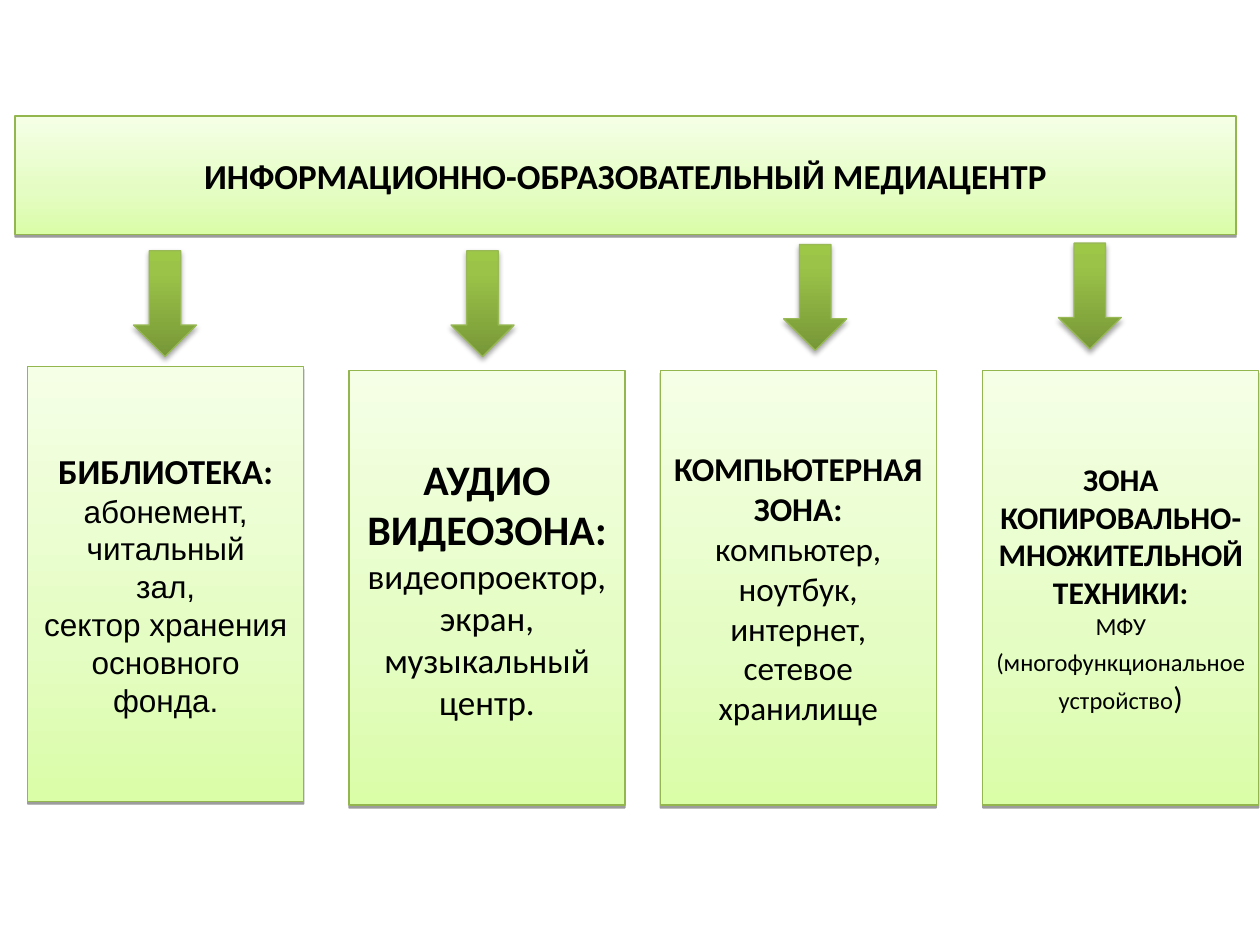
from pptx import Presentation
from pptx.dml.color import RGBColor
from pptx.enum.shapes import MSO_SHAPE
from pptx.enum.text import MSO_ANCHOR, PP_ALIGN
from pptx.oxml import parse_xml
from pptx.oxml.ns import nsdecls
from pptx.util import Inches, Pt

# Content: each paragraph is a list of (text, size, bold, font) runs
TITLE = [[("ИНФОРМАЦИОННО-ОБРАЗОВАТЕЛЬНЫЙ МЕДИАЦЕНТР", 20, True, "Calibri")]]


def zone(heading, heading_size, items, size, font="Calibri"):
    return [[(heading, heading_size, True, "Calibri")]] + [
        [(item, size, False, font)] for item in items]


LIBRARY = zone("БИБЛИОТЕКА:", 20,
               ["абонемент,", "читальный", "зал,",
                "сектор хранения основного фонда."], 18, "Arial")
AUDIO = zone("АУДИО ВИДЕОЗОНА:", 24,
             ["видеопроектор,", "экран,", "музыкальный центр."], 20)
COMPUTER = zone("КОМПЬЮТЕРНАЯ ЗОНА:", 19,
                ["компьютер,", "ноутбук,", "интернет,", "сетевое хранилище"], 19)
COPYING = zone("ЗОНА КОПИРОВАЛЬНО-МНОЖИТЕЛЬНОЙ ТЕХНИКИ:", 18, [], 14) + [
    [(text, size, False, "Calibri") for text, size in
     [("МФУ (многофункциональное", 14), (" ", 18), ("устройство", 14), (")", 18)]]]

# Columns: paragraphs, box left and top, arrow left and top (inches)
COLUMNS = [
    (LIBRARY, (0.22, 2.91), (1.06, 1.99)),
    (AUDIO, (2.77, 2.94), (3.58, 1.99)),
    (COMPUTER, (5.24, 2.94), (6.22, 1.94)),
    (COPYING, (7.8, 2.94), (8.4, 1.93)),
]
BOX_SIZE = (2.19, 3.45)
ARROW_SIZE = (0.5, 0.84)

COLORS = {"text": "000000", "shadow": "000000",
          "box_line": "94B64E", "arrow_line": "98B955"}
# Style: gradient stops, line colour, shadow (opacity %, blur pt, distance pt)
BOX = ([(0, "DAFDA7"), (35, "E4FDC2"), (100, "F5FFE6")],
       COLORS["box_line"], (38, 0, 1.6))
ARROW = ([(0, "779737"), (80, "9BC348"), (100, "9DC746")],
         COLORS["arrow_line"], (35, 3.1, 1.8))


def add_styled(slide, kind, pos, size, style):
    """Add a shape with a bottom-to-top gradient and a shadow falling down."""
    stops, line, (opacity, blur, dist) = style
    sp = slide.shapes.add_shape(kind, *map(Inches, pos + size))
    sp.shadow.inherit = False
    effects = sp._element.spPr[-1]
    gs = "".join(f'<a:gs pos="{at * 1000}"><a:srgbClr val="{color}"/></a:gs>'
                 for at, color in stops)
    effects.addprevious(parse_xml(
        f'<a:gradFill {nsdecls("a")} rotWithShape="1"><a:gsLst>{gs}</a:gsLst>'
        '<a:lin ang="16200000" scaled="0"/></a:gradFill>'))
    effects.append(parse_xml(
        f'<a:outerShdw {nsdecls("a")} blurRad="{Pt(blur)}" dist="{Pt(dist)}" '
        f'dir="5400000" rotWithShape="0"><a:srgbClr val="{COLORS["shadow"]}">'
        f'<a:alpha val="{opacity * 1000}"/></a:srgbClr></a:outerShdw>'))
    sp.line.color.rgb = RGBColor.from_string(line)
    sp.line.width = Pt(0.75)
    return sp


def add_box(slide, pos, size, paragraphs):
    tf = add_styled(slide, MSO_SHAPE.RECTANGLE, pos, size, BOX).text_frame
    tf.word_wrap = True
    tf.vertical_anchor = MSO_ANCHOR.MIDDLE
    for i, runs in enumerate(paragraphs):
        p = tf.add_paragraph() if i else tf.paragraphs[0]
        p.alignment = PP_ALIGN.CENTER
        for text, pt, bold, font in runs:
            r = p.add_run()
            r.text = text
            r.font.size, r.font.bold, r.font.name = Pt(pt), bold, font
            r.font.color.rgb = RGBColor.from_string(COLORS["text"])


def main():
    prs = Presentation()
    prs.slide_width, prs.slide_height = Inches(10), Inches(7.5)
    slide = prs.slides.add_slide(prs.slide_layouts[6])

    # Heading bar
    add_box(slide, (0.12, 0.92), (9.69, 0.94), TITLE)

    # Arrows and zones
    for paragraphs, box_pos, arrow_pos in COLUMNS:
        add_styled(slide, MSO_SHAPE.DOWN_ARROW, arrow_pos, ARROW_SIZE, ARROW)
        add_box(slide, box_pos, BOX_SIZE, paragraphs)

    prs.save("out.pptx")


if __name__ == "__main__":
    main()
